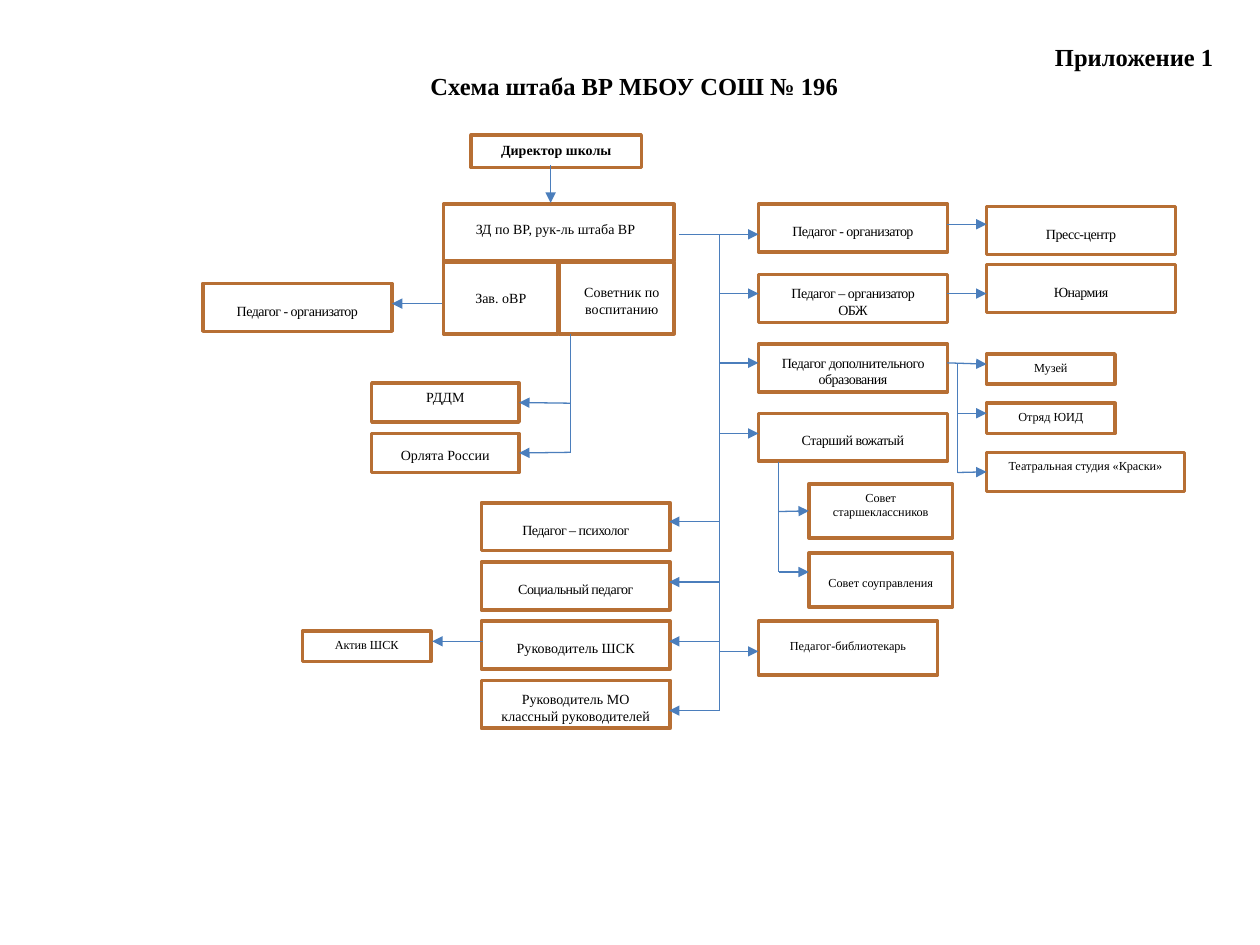
"""Builds the organisation chart of a school's education staff."""
from lxml import etree
from pptx import Presentation
from pptx.dml.color import RGBColor
from pptx.enum.shapes import MSO_CONNECTOR, MSO_SHAPE
from pptx.enum.text import MSO_ANCHOR, PP_ALIGN
from pptx.oxml.ns import qn
from pptx.util import Inches, Pt

COLORS = {"box": "B76F34", "arrow": "4B7EBC", "text": "000000", "paper": "FFFFFF"}
FONT = "Times New Roman"
LEFT, RIGHT = 1, 3


def write(p, text, size=8, bold=False, align=PP_ALIGN.CENTER, spacing=0):
    p.alignment = align
    r = p.add_run()
    r.text = text
    r.font.name = FONT
    r.font.size = Pt(size)
    r.font.bold = bold
    r.font.color.rgb = RGBColor.from_string(COLORS["text"])
    if spacing:
        r._r.get_or_add_rPr().set("spc", str(int(spacing * 100)))


class Chart:
    def __init__(self, s):
        self.s = s

    def box(self, shapes, x, y, w, h, fill=None):
        sp = shapes.add_shape(MSO_SHAPE.RECTANGLE, Inches(x), Inches(y), Inches(w), Inches(h))
        sp.shadow.inherit = False
        if fill:
            sp.fill.solid()
            sp.fill.fore_color.rgb = RGBColor.from_string(COLORS[fill])
        else:
            sp.fill.background()
        sp.line.color.rgb = RGBColor.from_string(COLORS["box"])
        sp.line.width = Pt(2)
        return sp

    def label(self, shapes, x, y, w, h, text, inset=(0.1, 0.05), anchor=MSO_ANCHOR.TOP, **style):
        tf = shapes.add_textbox(Inches(x), Inches(y), Inches(w), Inches(h)).text_frame
        tf.word_wrap = True
        tf.vertical_anchor = anchor
        tf.margin_left = tf.margin_right = Inches(inset[0])
        tf.margin_top = tf.margin_bottom = Inches(inset[1])
        write(tf.paragraphs[0], text, **style)
        return tf

    def node(self, text, x, y, w, h, dx=0, dy=0, label_w=None, label_h=0.22, fill=None, **style):
        shapes = self.s.shapes.add_group_shape().shapes
        sp = self.box(shapes, x, y, w, h, fill)
        self.label(shapes, x + dx, y + dy, label_w or w, label_h, text, **style)
        return sp

    def staff(self, text, x, y, w=1.5, h=0.38, middle=0.215, label_w=1.21, lines=1, spacing=-0.3):
        label_h = 0.13 * lines
        return self.node(text, x, y, w, h, dx=(w - label_w) / 2, dy=middle - label_h / 2,
                         label_w=label_w, label_h=label_h, inset=(0, 0),
                         anchor=MSO_ANCHOR.MIDDLE, spacing=spacing)

    def line(self, x1, y1, x2, y2, arrow=True, target=None, side=LEFT):
        c = self.s.shapes.add_connector(
            MSO_CONNECTOR.STRAIGHT, Inches(x1), Inches(y1), Inches(x2), Inches(y2))
        if target is not None:
            c.end_connect(target, side)
        c.line.color.rgb = RGBColor.from_string(COLORS["arrow"])
        c.line.width = Pt(0.75)
        if arrow:
            etree.SubElement(c.line._get_or_add_ln(), qn("a:tailEnd"), type="triangle")
        etree.SubElement(c._element.spPr, qn("a:effectLst"))


def main():
    prs = Presentation()
    prs.slide_width, prs.slide_height = Inches(10), Inches(7.5)
    s = prs.slides.add_slide(prs.slide_layouts[6])
    chart = Chart(s)

    tf = chart.label(s.shapes, 0.35, 0.29, 9.37, 0.56, "Приложение 1", inset=(0.09, 0.04),
                     size=14, bold=True, align=PP_ALIGN.RIGHT)
    write(tf.add_paragraph(), "Схема штаба ВР МБОУ СОШ № 196", size=14, bold=True)

    chart.node("Директор школы", 3.74, 1.07, 1.35, 0.26, fill="paper", bold=True)
    chart.node("ЗД по ВР, рук-ль штаба ВР", 3.52, 1.62, 1.83, 0.45, dx=-0.25, dy=0.08, label_w=2.28)
    chart.node("Зав. оВР", 3.52, 2.08, 0.91, 0.57, dy=0.17)
    chart.node("Советник по воспитанию", 4.44, 2.08, 0.91, 0.57, dy=0.12, label_w=0.99, label_h=0.37)
    chart.line(4.37, 1.31, 4.37, 1.61)

    chart.staff("Педагог - организатор", 1.61, 2.25)
    chart.line(3.51, 2.41, 3.11, 2.41)

    trunk, staff_x, club_x = 5.71, 6.02, 7.83
    for text, y, arrow_y, lines in [
        ("Педагог - организатор", 1.62, 1.86, 1),
        ("Педагог – организатор ОБЖ", 2.18, 2.33, 2),
        ("Педагог дополнительного образования", 2.73, 2.88, 2),
        ("Старший вожатый", 3.28, 3.44, 1),
    ]:
        chart.staff(text, staff_x, y, lines=lines)
        chart.line(5.39 if y == 1.62 else trunk, arrow_y, staff_x, arrow_y)
    chart.node("Педагог-библиотекарь", staff_x, 4.93, 1.42, 0.43, dy=0.09, size=7)
    chart.line(trunk, 5.17, staff_x, 5.17)
    chart.line(trunk, 1.86, trunk, 5.64, arrow=False)

    for i, (text, arrow_y, lines, spacing) in enumerate([
        ("Педагог – психолог", 4.14, 1, -0.3),
        ("Социальный педагог", 4.62, 1, -0.3),
        ("Руководитель ШСК", 5.09, 1, 0),
        ("Руководитель МО классный руководителей", 5.64, 2, 0),
    ]):
        chart.staff(text, 3.82, 3.99 + 0.47 * i, lines=lines, spacing=spacing)
        chart.line(trunk, arrow_y, 5.31, arrow_y)
    chart.node("Актив ШСК", 2.4, 5.01, 1.02, 0.24, size=7)
    chart.line(3.83, 5.09, 3.43, 5.09)

    for text, y, arrow_y in [("Пресс-центр", 1.64, 1.78), ("Юнармия", 2.1, 2.33)]:
        chart.staff(text, club_x, y)
        chart.line(7.52, arrow_y, club_x, arrow_y)

    chart.node("Музей", club_x, 2.81, 1.02, 0.24, size=7)
    chart.node("Отряд ЮИД", club_x, 3.2, 1.02, 0.24, size=7)
    studio = chart.node("Театральная студия «Краски»", club_x, 3.59, 1.57, 0.31, size=7)
    chart.line(7.52, 2.88, club_x, 2.89)
    chart.line(7.6, 3.28, club_x, 3.28)
    chart.line(7.6, 3.75, club_x, 3.75, target=studio)
    chart.line(7.6, 2.88, 7.6, 3.75, arrow=False)

    seniors = chart.node("Совет старшеклассников", 6.42, 3.84, 1.14, 0.43, label_h=0.43, size=7)
    chart.node("Совет соуправления", 6.42, 4.39, 1.14, 0.43, dy=0.13, size=7)
    chart.line(6.18, 3.67, 6.18, 4.54, arrow=False)
    chart.line(6.18, 4.06, 6.42, 4.06, target=seniors)
    chart.line(6.18, 4.54, 6.42, 4.54)

    for text, y, middle, arrow_y in [("РДДМ", 3.04, 0.11, 3.2), ("Орлята России", 3.44, 0.17, 3.59)]:
        team = chart.staff(text, 2.95, y, 1.17, 0.31, middle, label_w=1.17, spacing=0)
        chart.line(4.53, arrow_y, 4.13, arrow_y, target=team, side=RIGHT)
    chart.line(4.53, 2.65, 4.53, 3.59, arrow=False)

    prs.save("out.pptx")


if __name__ == "__main__":
    main()
